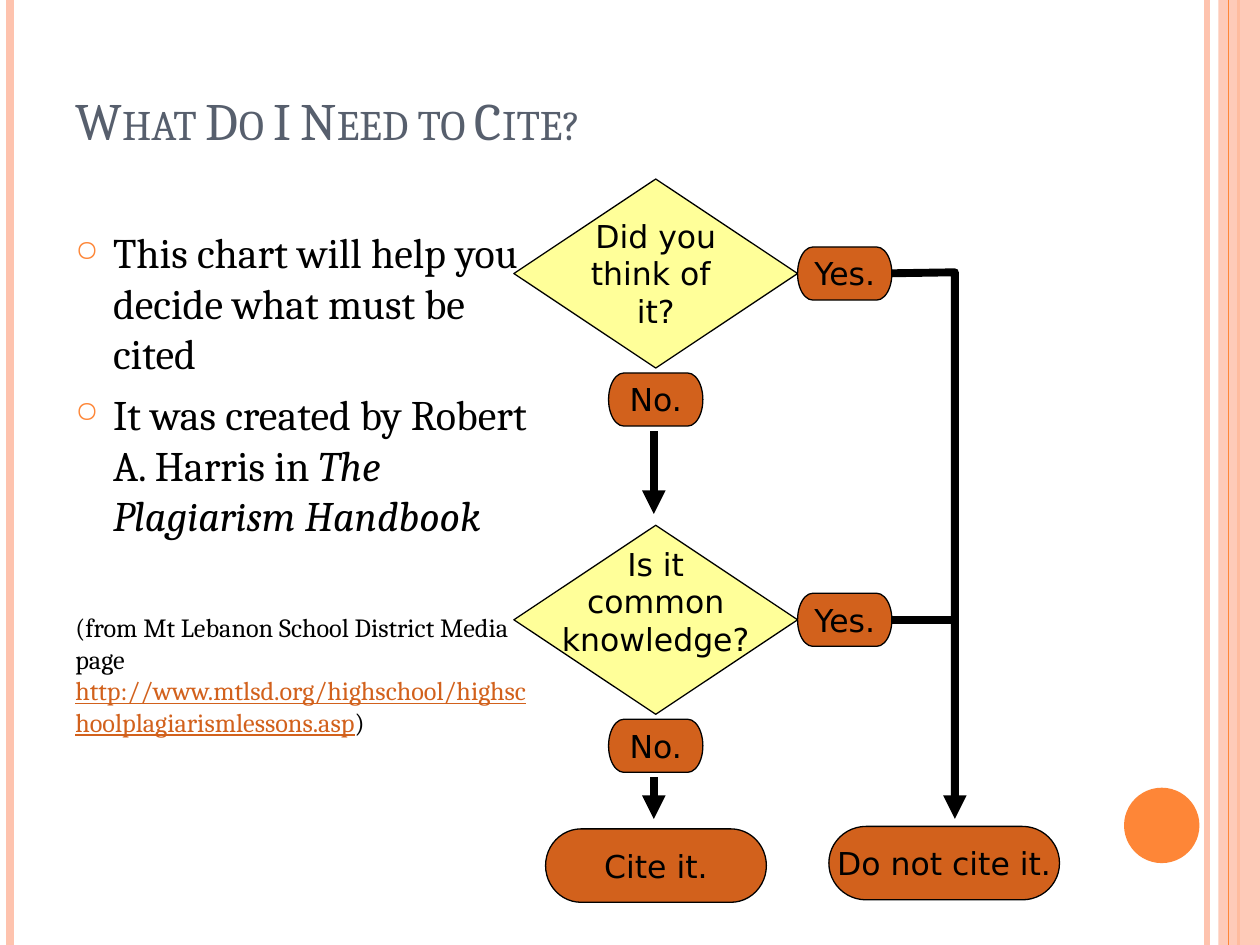
from dataclasses import dataclass

from lxml.etree import SubElement
from pptx import Presentation
from pptx.dml.color import RGBColor
from pptx.enum.shapes import MSO_CONNECTOR as Connector, MSO_SHAPE as Shape
from pptx.enum.text import MSO_ANCHOR as Anchor, PP_ALIGN as Align
from pptx.oxml.ns import qn
from pptx.util import Cm, Pt

COLORS = {
    "peach": "FEC3AE", "orange": "FE8637", "rust": "D2611C",
    "yellow": "FFFF99", "slate": "575F6D", "black": "000000",
}
SERIF, SANS = "Cambria", "DejaVu Sans"
SLIDE_HEIGHT = 19.05
STEP_HEIGHT = 6.98  # from one question to the next


@dataclass(frozen=True)
class Node:
    text: str
    left: float
    top: float
    width: float
    height: float
    preset: Shape = Shape.FLOWCHART_TERMINATOR
    fill: str = "rust"
    bottom_inset: float = 0.13


@dataclass(frozen=True)
class Line:
    start: tuple[float, float]
    end: tuple[float, float]
    color: str = "black"
    weight: float = 4.5
    arrow: bool = False


@dataclass(frozen=True)
class Run:
    text: str
    size: float
    color: str = "black"
    italic: bool = False
    underline: bool = False


@dataclass(frozen=True)
class BodyParagraph:
    runs: tuple[Run, ...]
    space_before: float = 6
    bullet: bool = False


def rail(x: float, color: str, weight: float) -> Line:
    """Line over the full height of the slide."""
    return Line((x, 0), (x, SLIDE_HEIGHT), color, weight)


def question(text: str, step: int, bottom_inset: float = 0.13) -> list[Node]:
    """A decision with its answers below and to the right."""
    top = 3.61 + step * STEP_HEIGHT
    return [
        Node(text, 10.36, top, 5.72, 3.81, Shape.FLOWCHART_DECISION, "yellow", bottom_inset),
        Node("No.", 12.27, top + 3.91, 1.9, 1.07),
        Node("Yes.", 16.08, top + 1.37, 1.9, 1.07),
    ]


LEFT_RAILS = [rail(24.33, "peach", 3), rail(0.2, "peach", 4.5), rail(24.97, "orange", 1.5)]
NODES = [
    *question("Did you\nthink of \nit?", 0),
    *question("Is it\ncommon\nknowledge?", 1, bottom_inset=0.87),
    Node("Cite it.", 11, 16.71, 4.45, 1.48),
    Node("Do not cite it.", 16.71, 16.66, 4.65, 1.48),
]
FLOW_LINES = [
    Line((13.18, 8.69), (13.18, 10.36), arrow=True),
    Line((13.18, 15.67), (13.18, 16.51), arrow=True),
    Line((17.98, 12.5), (19.25, 12.5)),
]
YES_ROUTE = [(17.98, 5.51), (19.25, 5.49), (19.25, 16.51)]
BODY = [
    BodyParagraph((Run("This chart will help you decide what must be cited", 24),), bullet=True),
    BodyParagraph((
        Run("It was created by Robert A. Harris in ", 24),
        Run("The Plagiarism Handbook", 24, italic=True),
    ), bullet=True),
    BodyParagraph((
        Run("(from Mt Lebanon School District Media page ", 15),
        Run("http://www.mtlsd.org/highschool/highschoolplagiarismlessons.asp", 15,
            "rust", underline=True),
        Run(")", 15),
    ), space_before=41),
]


def rgb(name: str) -> RGBColor:
    return RGBColor.from_string(COLORS[name])


def style_font(font, name: str, size: float, color: str) -> None:
    font.name, font.size = name, Pt(size)
    font.color.rgb = rgb(color)


def style_line(shape, color: str, weight: float, arrow: bool) -> None:
    shape.line.color.rgb = rgb(color)
    shape.line.width = Pt(weight)
    if arrow:
        SubElement(shape.line._get_or_add_ln(), qn("a:tailEnd"), type="triangle")


def draw_line(slide, line: Line) -> None:
    points = [Cm(value) for value in (*line.start, *line.end)]
    connector = slide.shapes.add_connector(Connector.STRAIGHT, *points)
    style_line(connector, line.color, line.weight, line.arrow)
    SubElement(connector._element.spPr, qn("a:effectLst"))


def draw_route(slide, points: list[tuple[float, float]]) -> None:
    start, *others = [(Cm(x), Cm(y)) for x, y in points]
    builder = slide.shapes.build_freeform(*start)
    builder.add_line_segments(others, close=False)
    route = builder.convert_to_shape()
    route.fill.background()
    route.shadow.inherit = False
    style_line(route, "black", 4.5, arrow=True)


def draw_shape(slide, preset: Shape, box: tuple[float, ...], fill: str):
    shape = slide.shapes.add_shape(preset, *(Cm(value) for value in box))
    shape.shadow.inherit = False
    shape.fill.solid()
    shape.fill.fore_color.rgb = rgb(fill)
    shape.line.fill.background()
    return shape


def draw_node(slide, node: Node) -> None:
    box = (node.left, node.top, node.width, node.height)
    shape = draw_shape(slide, node.preset, box, node.fill)
    style_line(shape, "black", 0.75, arrow=False)
    text_frame = shape.text_frame
    text_frame.text = node.text
    text_frame.word_wrap = False
    text_frame.vertical_anchor = Anchor.MIDDLE
    text_frame.margin_bottom = Cm(node.bottom_inset)
    for paragraph in text_frame.paragraphs:
        paragraph.alignment = Align.CENTER
        style_font(paragraph.runs[0].font, SANS, 18, "black")


def draw_decoration(slide) -> None:
    for line in LEFT_RAILS:
        draw_line(slide, line)
    band = draw_shape(slide, Shape.RECTANGLE, (24.56, 0, 0.84, SLIDE_HEIGHT), "peach")
    color = band.fill._xPr.find(qn("a:solidFill"))[0]
    SubElement(color, qn("a:alpha"), val="87000")
    draw_line(slide, rail(24.77, "orange", 0.75))
    draw_shape(slide, Shape.OVAL, (22.66, 15.88, 1.52, 1.52), "orange")


def format_title(title) -> None:
    title.left, title.top, title.width, title.height = Cm(1.27), Cm(0), Cm(20.75), Cm(3.18)
    title.text_frame.text = "What Do I Need to Cite?"
    title.text_frame.vertical_anchor = Anchor.BOTTOM
    paragraph = title.text_frame.paragraphs[0]
    paragraph.alignment = Align.LEFT
    font = paragraph.runs[0].font
    style_font(font, SERIF, 30, "slate")
    font._element.set("cap", "small")


def add_bullet(paragraph) -> None:
    properties = paragraph._p.get_or_add_pPr()
    properties.set("marL", str(Cm(0.76)))
    properties.set("indent", str(-Cm(0.76)))
    color = SubElement(properties, qn("a:buClr"))
    SubElement(color, qn("a:srgbClr"), val=COLORS["orange"])
    SubElement(properties, qn("a:buSzPct"), val="70000")
    SubElement(properties, qn("a:buChar"), char="○")


def draw_body(slide) -> None:
    box = slide.shapes.add_textbox(Cm(1.27), Cm(4.45), Cm(9.6), Cm(13.54))
    text_frame = box.text_frame
    text_frame.word_wrap = True
    for index, item in enumerate(BODY):
        paragraph = text_frame.add_paragraph() if index else text_frame.paragraphs[0]
        paragraph.space_before = Pt(item.space_before)
        if item.bullet:
            add_bullet(paragraph)
        for part in item.runs:
            run = paragraph.add_run()
            run.text = part.text
            style_font(run.font, SERIF, part.size, part.color)
            run.font.italic, run.font.underline = part.italic, part.underline


def main() -> None:
    presentation = Presentation()
    presentation.slide_width, presentation.slide_height = Cm(25.4), Cm(SLIDE_HEIGHT)
    slide = presentation.slides.add_slide(presentation.slide_layouts[5])
    draw_decoration(slide)
    format_title(slide.shapes.title)
    draw_body(slide)
    for node in NODES:
        draw_node(slide, node)
    for line in FLOW_LINES:
        draw_line(slide, line)
    draw_route(slide, YES_ROUTE)
    presentation.save("out.pptx")


if __name__ == "__main__":
    main()
